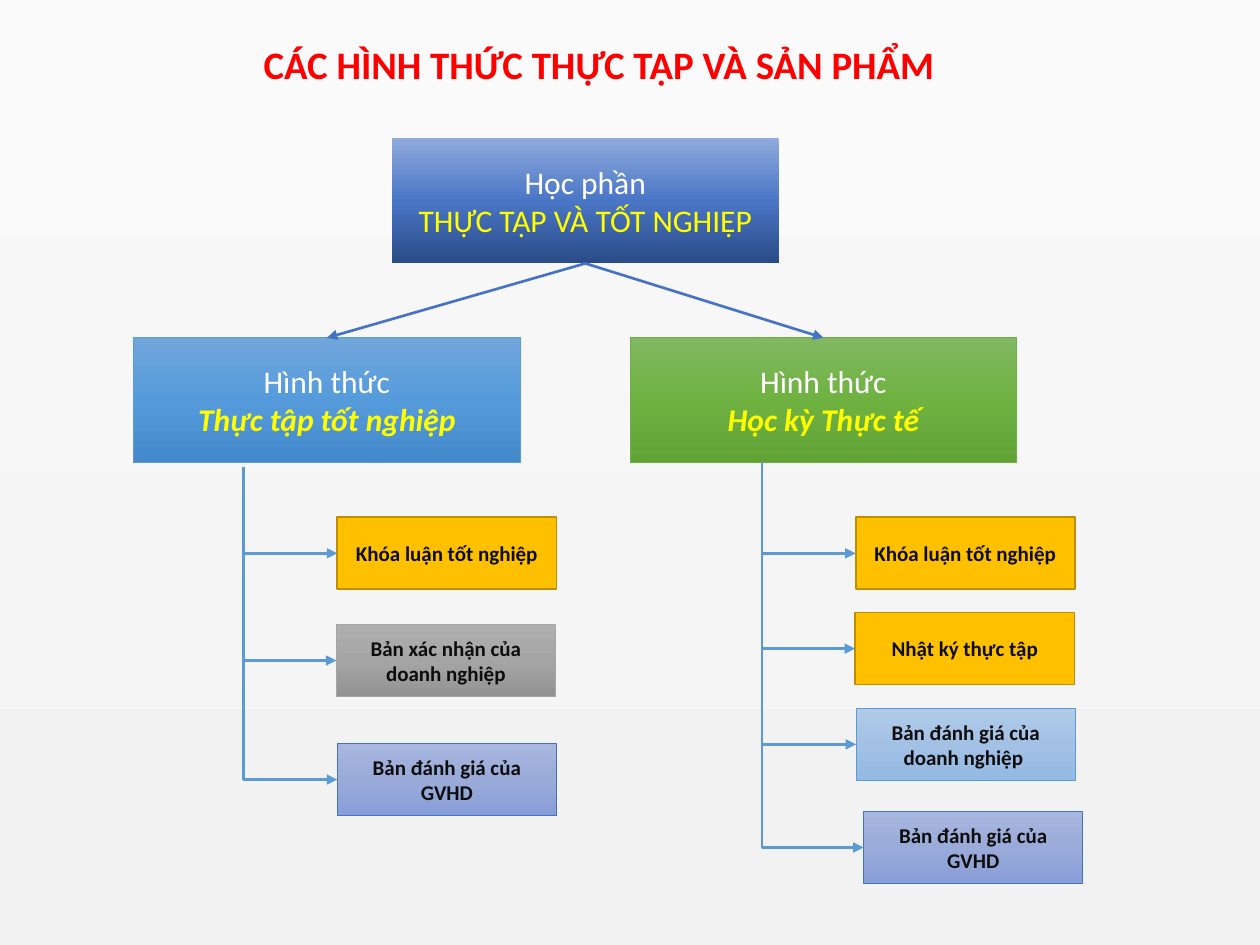
import copy

import lxml.etree
import pptx
import pptx.dml.color
import pptx.enum.dml
import pptx.enum.shapes
import pptx.enum.text
import pptx.oxml.ns
import pptx.util

Cm, Pt = pptx.util.Cm, pptx.util.Pt
RGB = pptx.dml.color.RGBColor
qn = pptx.oxml.ns.qn
PP_ALIGN = pptx.enum.text.PP_ALIGN
ANCHOR = pptx.enum.text.MSO_ANCHOR
CONNECTOR = pptx.enum.shapes.MSO_CONNECTOR

WHITE = RGB(0xFF, 0xFF, 0xFF)
RED = RGB(0xFF, 0x00, 0x00)
YELLOW = RGB(0xFF, 0xFF, 0x00)
INK = RGB(0x0D, 0x0D, 0x0D)
NAVY = RGB(0x44, 0x72, 0xC4)
BLUE = RGB(0x5B, 0x9B, 0xD5)
GREEN = RGB(0x70, 0xAD, 0x47)
GREY = RGB(0xA5, 0xA5, 0xA5)
GOLD = RGB(0xFF, 0xC0, 0x00)
GOLD_EDGE = RGB(0xBD, 0x8E, 0x00)

PAPER_SHADES = [RGB(0xFA, 0xFA, 0xFA), RGB(0xF2, 0xF2, 0xF2)]
NAVY_SHADES = [RGB(0x8F, 0xAA, 0xDC), RGB(0x4A, 0x76, 0xC6), RGB(0x2A, 0x4B, 0x86)]
BLUE_SHADES = [RGB(0x71, 0xA6, 0xDB), RGB(0x55, 0x9B, 0xDB), RGB(0x44, 0x8A, 0xCA)]
GREEN_SHADES = [RGB(0x81, 0xB8, 0x61), RGB(0x6F, 0xB2, 0x42), RGB(0x62, 0xA3, 0x36)]
GREY_SHADES = [RGB(0xAF, 0xAF, 0xAF), RGB(0xA5, 0xA5, 0xA5), RGB(0x93, 0x93, 0x93)]
LAVENDER_SHADES = [RGB(0xA8, 0xB7, 0xDF), RGB(0x9A, 0xAB, 0xD9), RGB(0x88, 0x9E, 0xD7)]
SKY_SHADES = [RGB(0xB1, 0xCB, 0xE9), RGB(0xA3, 0xC1, 0xE5), RGB(0x93, 0xB9, 0xE4)]

THESIS_STYLE = dict(shades=[GOLD], edge=GOLD_EDGE, edge_width=1)
CONFIRMATION_STYLE = dict(shades=GREY_SHADES, edge=GREY)
COMPANY_STYLE = dict(shades=SKY_SHADES, edge=BLUE)
TEACHER_STYLE = dict(shades=LAVENDER_SHADES, edge=NAVY)

PANEL_WIDTH, PANEL_HEIGHT = 7.8, 2.52
PRODUCT_WIDTH, PRODUCT_HEIGHT = 4.42, 1.45


def write_line(frame, text, size=18, color=WHITE, bold=False, italic=False,
               align=PP_ALIGN.CENTER):
    """Write one formatted paragraph into the frame and return it."""
    paragraph = frame.paragraphs[0] if not frame.text else frame.add_paragraph()
    paragraph.alignment = align
    run = paragraph.add_run()
    run.text = text
    run.font.name = "Calibri"
    run.font.size = Pt(size)
    run.font.color.rgb = color
    run.font.bold = bold
    run.font.italic = italic
    return paragraph


def paint(fill, element, shades):
    """Fill with one colour, or with evenly spaced shades from top to bottom."""
    if len(shades) == 1:
        fill.solid()
        fill.fore_color.rgb = shades[0]
        return
    fill.gradient()
    fill.gradient_angle = 270
    stop_list = next(element.iter(qn("a:gsLst")))
    while len(stop_list) < len(shades):
        stop_list.insert(1, copy.deepcopy(stop_list[0]))
    for index, (stop, shade) in enumerate(zip(fill.gradient_stops, shades)):
        stop.color.rgb = shade
        stop.position = index / (len(shades) - 1)


def add_box(slide, left, top, width, height, shades, edge=None, edge_width=0.5):
    """Add a rectangle with a fill and an optional outline."""
    box = slide.shapes.add_shape(pptx.enum.shapes.MSO_SHAPE.RECTANGLE,
                                 Cm(left), Cm(top), Cm(width), Cm(height))
    box.shadow.inherit = False
    paint(box.fill, box._element, shades)
    if edge is None:
        box.line.fill.background()
    else:
        box.line.color.rgb = edge
        box.line.width = Pt(edge_width)
    box.text_frame.word_wrap = True
    box.text_frame.vertical_anchor = ANCHOR.MIDDLE
    return box


def add_panel(slide, left, top, heading, name, shades, edge=None, emphasis=False):
    """Add a large box with a heading above a name."""
    panel = add_box(slide, left, top, PANEL_WIDTH, PANEL_HEIGHT, shades, edge)
    write_line(panel.text_frame, heading)
    write_line(panel.text_frame, name, color=YELLOW, bold=emphasis, italic=emphasis)
    return panel


def add_arrow(slide, kind, start, end, color):
    """Add a connector with an arrowhead at its end."""
    arrow = slide.shapes.add_connector(kind, *map(Cm, start + end))
    arrow.line.color.rgb = color
    arrow.line.width = Pt(1.5)
    properties = arrow._element.spPr
    lxml.etree.SubElement(properties.find(qn("a:ln")), qn("a:tailEnd"), type="triangle")
    lxml.etree.SubElement(properties, qn("a:effectLst"))
    return arrow


def add_branch(slide, start, end):
    """Add an elbow arrow that goes down first and then right."""
    branch = add_arrow(slide, CONNECTOR.ELBOW, start, end, BLUE)
    adjustments = next(branch._element.iter(qn("a:avLst")))
    lxml.etree.SubElement(adjustments, qn("a:gd"), name="adj1", fmla="val 0")


def add_products(slide, trunk, products):
    """Add the product boxes that hang from one trunk."""
    for left, top, text, style in products:
        product = add_box(slide, left, top, PRODUCT_WIDTH, PRODUCT_HEIGHT, **style)
        write_line(product.text_frame, text, size=12, color=INK, bold=True)
        add_branch(slide, trunk, (left, top + PRODUCT_HEIGHT / 2))


def add_title(slide, text):
    """Place and format the slide title."""
    title = slide.shapes.title
    title.left, title.top, title.width, title.height = map(Cm, (5.06, 0.94, 14.08, 1.02))
    frame = title.text_frame
    frame.auto_size = pptx.enum.text.MSO_AUTO_SIZE.NONE
    frame.vertical_anchor = ANCHOR.TOP
    line = write_line(frame, text, size=22.2, color=RED, bold=True, align=PP_ALIGN.LEFT)
    line.line_spacing = 0.7


def main():
    """Build the slide and save it."""
    deck = pptx.Presentation()
    deck.slide_width, deck.slide_height = Cm(25.4), Cm(19.05)
    slide = deck.slides.add_slide(deck.slide_layouts[5])
    paint(slide.background.fill, slide._element, PAPER_SHADES)
    add_title(slide, "CÁC HÌNH THỨC THỰC TẬP VÀ SẢN PHẨM")

    course = add_panel(slide, 7.9, 2.79, "Học phần", "THỰC TẬP VÀ TỐT NGHIỆP", NAVY_SHADES)
    internship = add_panel(slide, 2.69, 6.81, "Hình thức", "Thực tập tốt nghiệp",
                           BLUE_SHADES, BLUE, emphasis=True)
    semester = add_panel(slide, 12.7, 6.81, "Hình thức", "Học kỳ Thực tế",
                         GREEN_SHADES, GREEN, emphasis=True)
    for form in (internship, semester):
        link = add_arrow(slide, CONNECTOR.STRAIGHT, (0, 0), (1, 1), NAVY)
        link.begin_connect(course, 2)
        link.end_connect(form, 0)

    add_products(slide, (4.91, 9.42), [
        (6.8, 10.43, "Khóa luận tốt nghiệp", THESIS_STYLE),
        (6.78, 12.59, "Bản xác nhận của doanh nghiệp", CONFIRMATION_STYLE),
        (6.8, 14.99, "Bản đánh giá của GVHD", TEACHER_STYLE),
    ])
    add_products(slide, (15.36, 9.32), [
        (17.25, 10.43, "Khóa luận tốt nghiệp", THESIS_STYLE),
        (17.24, 12.35, "Nhật ký thực tập", THESIS_STYLE),
        (17.26, 14.28, "Bản đánh giá của doanh nghiệp ", COMPANY_STYLE),
        (17.41, 16.36, "Bản đánh giá của GVHD", TEACHER_STYLE),
    ])
    deck.save("out.pptx")


if __name__ == "__main__":
    main()
